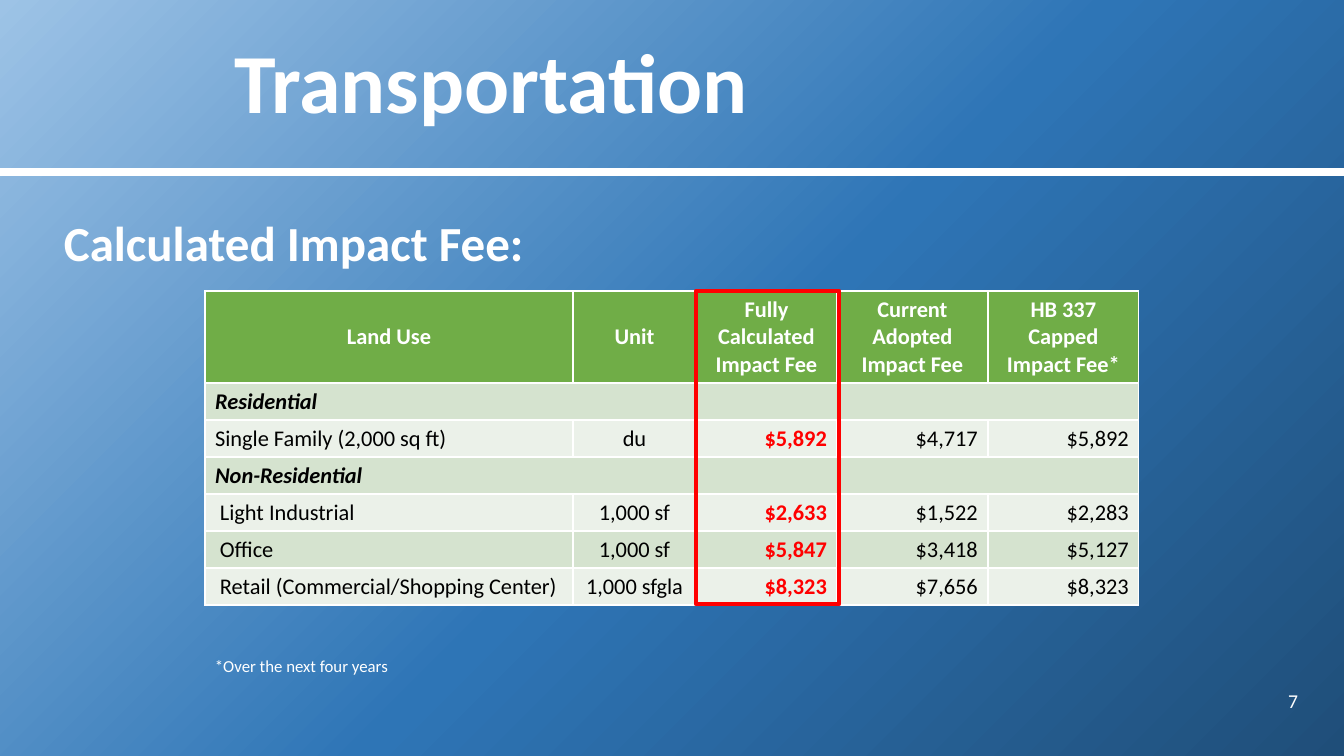
from pptx import Presentation
from pptx.dml.color import RGBColor
from pptx.enum.shapes import MSO_CONNECTOR as Connector, MSO_SHAPE as Shape
from pptx.enum.text import MSO_ANCHOR as Anchor, MSO_AUTO_SIZE as AutoSize, PP_ALIGN as Align
from pptx.oxml import parse_xml
from pptx.oxml.ns import nsdecls
from pptx.util import Emu, Pt

SCALE = 914400 / 100.8
FONT = "Calibri"
WHITE, BLACK, RED = "FFFFFF", "000000", "FF0000"
GREEN, DARK_BAND, LIGHT_BAND = "70AD47", "D5E3CF", "EBF1E9"
BACKGROUND_STOPS = [(0, "9DC3E6"), (53, "2E75B6"), (100, "1F4E79")]

COLUMN_WIDTHS = [368, 123, 141, 151, 151]
COLUMN_ALIGNS = [Align.LEFT, Align.CENTER, Align.RIGHT, Align.RIGHT, Align.RIGHT]
HEADER_HEIGHT, ROW_HEIGHT = 92, 37
FULL_FEE_COLUMN = 2
INDENTED_FROM_ROW = 4
FEE_ROWS = [
    ["Land Use", "Unit", "Fully Calculated Impact Fee",
     "Current Adopted Impact Fee", "HB 337 Capped Impact Fee*"],
    ["Residential"],
    ["Single Family (2,000 sq ft)", "du", "$5,892", "$4,717", "$5,892"],
    ["Non-Residential"],
    ["Light Industrial", "1,000 sf", "$2,633", "$1,522", "$2,283"],
    ["Office", "1,000 sf", "$5,847", "$3,418", "$5,127"],
    ["Retail (Commercial/Shopping Center)", "1,000 sfgla", "$8,323", "$7,656", "$8,323"],
]


def px(length):
    return Emu(round(length * SCALE))


def color(hex_code):
    return RGBColor.from_string(hex_code)


def write(frame, text, size, hex_code=WHITE, bold=False, italic=False, align=Align.LEFT):
    """Set the text of a frame and format its only paragraph, which is returned."""
    frame.text = text
    para = frame.paragraphs[0]
    para.alignment = align
    font = para.runs[0].font
    font.name, font.size = FONT, Pt(size)
    font.bold, font.italic = bold, italic
    font.color.rgb = color(hex_code)
    return para


def paint_background(page):
    stops = "".join(
        f'<a:gs pos="{place * 1000}"><a:srgbClr val="{hex_code}"/></a:gs>'
        for place, hex_code in BACKGROUND_STOPS)
    background = parse_xml(
        f'<p:bg {nsdecls("p", "a")}><p:bgPr><a:gradFill rotWithShape="1">'
        f'<a:gsLst>{stops}</a:gsLst><a:path path="circle">'
        '<a:fillToRect r="100000" b="100000"/></a:path></a:gradFill>'
        '<a:effectLst/></p:bgPr></p:bg>')
    page.shapes._spTree.getparent().insert(0, background)


def add_divider(page, top, width):
    line = page.shapes.add_connector(Connector.STRAIGHT, 0, px(top), px(width), px(top))
    line.line.color.rgb = color(WHITE)
    line.line.width = Pt(6)
    line._element.spPr.append(parse_xml(f'<a:effectLst {nsdecls("a")}/>'))


def set_title(page, text, left, top, width, height):
    title = page.shapes.title
    title.left, title.top, title.width, title.height = map(px, (left, top, width, height))
    frame = title.text_frame
    frame.auto_size = AutoSize.NONE
    frame.vertical_anchor = Anchor.MIDDLE
    para = write(frame, text, 60, bold=True)
    para.line_spacing = 0.9
    shadow = parse_xml(
        f'<a:effectLst {nsdecls("a")}><a:outerShdw blurRad="38100" dist="38100" '
        'dir="2700000" algn="tl"><a:srgbClr val="000000"><a:alpha val="43000"/>'
        '</a:srgbClr></a:outerShdw></a:effectLst>')
    para.runs[0].font._element.solidFill.addnext(shadow)


def add_text(page, text, left, top, width, height, size, anchor=Anchor.TOP, **style):
    box = page.shapes.add_textbox(px(left), px(top), px(width), px(height))
    box.text_frame.word_wrap = True
    box.text_frame.vertical_anchor = anchor
    return write(box.text_frame, text, size, **style)


def fill_cell(cell, text, fill, **style):
    cell.fill.solid()
    cell.fill.fore_color.rgb = color(fill)
    cell.vertical_anchor = Anchor.MIDDLE
    write(cell.text_frame, text, 16, **style)


def add_fee_table(page, left, top):
    height = HEADER_HEIGHT + ROW_HEIGHT * (len(FEE_ROWS) - 1)
    table = page.shapes.add_table(
        len(FEE_ROWS), len(COLUMN_WIDTHS), px(left), px(top),
        px(sum(COLUMN_WIDTHS)), px(height)).table
    for column, width in zip(table.columns, COLUMN_WIDTHS):
        column.width = px(width)
    for row_index, texts in enumerate(FEE_ROWS):
        is_header = row_index == 0
        table.rows[row_index].height = px(HEADER_HEIGHT if is_header else ROW_HEIGHT)
        band = DARK_BAND if row_index % 2 else LIGHT_BAND
        is_group = len(texts) == 1
        if is_group:
            table.cell(row_index, 0).merge(table.cell(row_index, len(COLUMN_WIDTHS) - 1))
        for column_index, text in enumerate(texts):
            cell = table.cell(row_index, column_index)
            if is_header:
                fill_cell(cell, text, GREEN, bold=True, align=Align.CENTER)
                continue
            is_full_fee = column_index == FULL_FEE_COLUMN
            fill_cell(cell, text, band, hex_code=RED if is_full_fee else BLACK,
                      bold=is_group or is_full_fee, italic=is_group,
                      align=COLUMN_ALIGNS[column_index])
            if column_index == 0 and row_index >= INDENTED_FROM_ROW and not is_group:
                cell.margin_left = px(15)


def add_highlight(page, left, top, width, height):
    frame = page.shapes.add_shape(Shape.RECTANGLE, px(left), px(top), px(width), px(height))
    frame.shadow.inherit = False
    frame.fill.background()
    frame.line.color.rgb = color(RED)
    frame.line.width = Pt(3.25)


def main():
    deck = Presentation()
    deck.slide_width, deck.slide_height = px(1344), px(756)
    page = deck.slides.add_slide(deck.slide_layouts[5])
    paint_background(page)
    add_divider(page, 172, 1344)
    add_text(page, "7", 1218, 681, 90, 40, 14, Anchor.MIDDLE, align=Align.RIGHT)
    set_title(page, "Transportation", 224, 0, 1083, 172)
    heading = add_text(page, "Calculated Impact Fee:", 54, 196, 1252, 531, 35, bold=True)
    heading.line_spacing = 1.2
    add_fee_table(page, 205, 291)
    add_text(page, "*Over the next four years", 205, 651, 272, 30, 12)
    add_highlight(page, 696, 291, 143, 313)
    deck.save("out.pptx")


if __name__ == "__main__":
    main()
